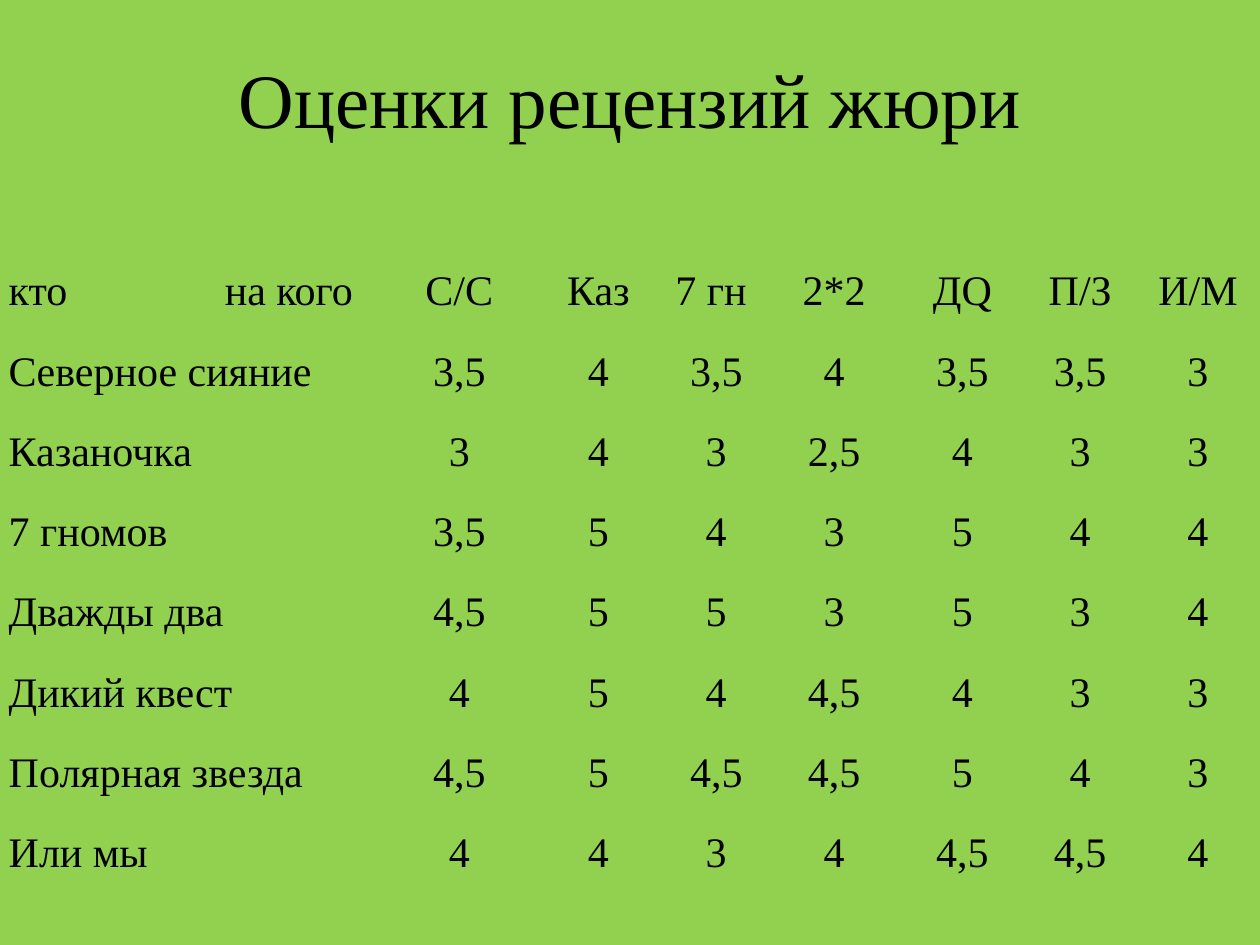
"""Build the slide with the jury's review scores."""
from lxml.etree import SubElement
from pptx import Presentation
from pptx.dml.color import RGBColor
from pptx.enum.text import MSO_ANCHOR, PP_ALIGN
from pptx.oxml.ns import qn
from pptx.util import Pt

GREEN = RGBColor(0x92, 0xD0, 0x50)
BLACK = RGBColor(0, 0, 0)
NO_STYLE = "{2D5ABB26-0587-4C30-8999-92F81FD0307C}"
COLUMN_WIDTHS = (219.6, 85.7, 73.4, 61.2, 73.4, 73.4, 61.2, 73.4)
HEADER_HEIGHT, ROW_HEIGHT = 106.6, 45.87
SCORES = (
    ("кто\tна кого", "С/С", "Каз", "7 гн ", "2*2", "ДQ", "П/З", "И/М"),
    ("Cеверное сияние", "3,5", "4", "3,5", "4", "3,5", "3,5", "3"),
    ("Казаночка", "3", "4", "3", "2,5", "4", "3", "3"),
    ("7 гномов", "3,5", "5", "4", "3", "5", "4", "4"),
    ("Дважды два", "4,5", "5", "5", "3", "5", "3", "4"),
    ("Дикий квест", "4", "5", "4", "4,5", "4", "3", "3"),
    ("Полярная звезда", "4,5", "5", "4,5", "4,5", "5", "4", "3"),
    ("Или мы", "4", "4", "3", "4", "4,5", "4,5", "4"),
)


def write(tf, text, size=24, align=PP_ALIGN.CENTER, spacing=None, tab=None, font="Times New Roman", color=BLACK):
    p = tf.paragraphs[0]
    p.alignment = align
    if spacing:
        p.line_spacing = spacing
    if tab:
        tabs = SubElement(p._p.get_or_add_pPr(), qn("a:tabLst"))
        SubElement(tabs, qn("a:tab"), pos=str(Pt(tab)), algn="l")
    r = p.add_run()
    r.text = text
    r.font.size = Pt(size)
    r.font.name = font
    r.font.color.rgb = color


class Deck:
    def __init__(self, width, height, background):
        self.prs = Presentation()
        self.prs.slide_width, self.prs.slide_height = Pt(width), Pt(height)
        self.s = self.prs.slides.add_slide(self.prs.slide_layouts[5])
        self.s.background.fill.solid()
        self.s.background.fill.fore_color.rgb = background

    def title(self, text, left, top, width, height):
        sp = self.s.shapes.title
        sp.left, sp.top, sp.width, sp.height = map(Pt, (left, top, width, height))
        sp.text_frame.vertical_anchor = MSO_ANCHOR.MIDDLE
        write(sp.text_frame, text, size=44)

    def table(self, rows, left, top, widths, heights):
        table = self.s.shapes.add_table(
            len(rows), len(widths), Pt(left), Pt(top), Pt(sum(widths)), Pt(sum(heights))
        ).table
        table.first_row = table.horz_banding = False
        table._tbl.tblPr.find(qn("a:tableStyleId")).text = NO_STYLE
        for column, width in zip(table.columns, widths):
            column.width = Pt(width)
        for i, (row, height) in enumerate(zip(rows, heights)):
            table.rows[i].height = Pt(height)
            for j, text in enumerate(row):
                self.cell(table.cell(i, j), text, PP_ALIGN.CENTER if j else PP_ALIGN.LEFT)

    def cell(self, cell, text, align):
        cell.fill.background()
        cell.vertical_anchor = MSO_ANCHOR.BOTTOM
        cell.margin_left = cell.margin_right = Pt(5)
        cell.margin_top = cell.margin_bottom = Pt(0)
        write(cell.text_frame, text, align=align, spacing=1.15, tab=123.5 if "\t" in text else None)


def main():
    deck = Deck(720, 540, GREEN)
    deck.title("Оценки рецензий жюри", 36, 21.6, 648, 68.4)
    heights = [HEADER_HEIGHT] + [ROW_HEIGHT] * (len(SCORES) - 1)
    deck.table(SCORES, 0, 73.4, COLUMN_WIDTHS, heights)
    deck.prs.save("out.pptx")


if __name__ == "__main__":
    main()
